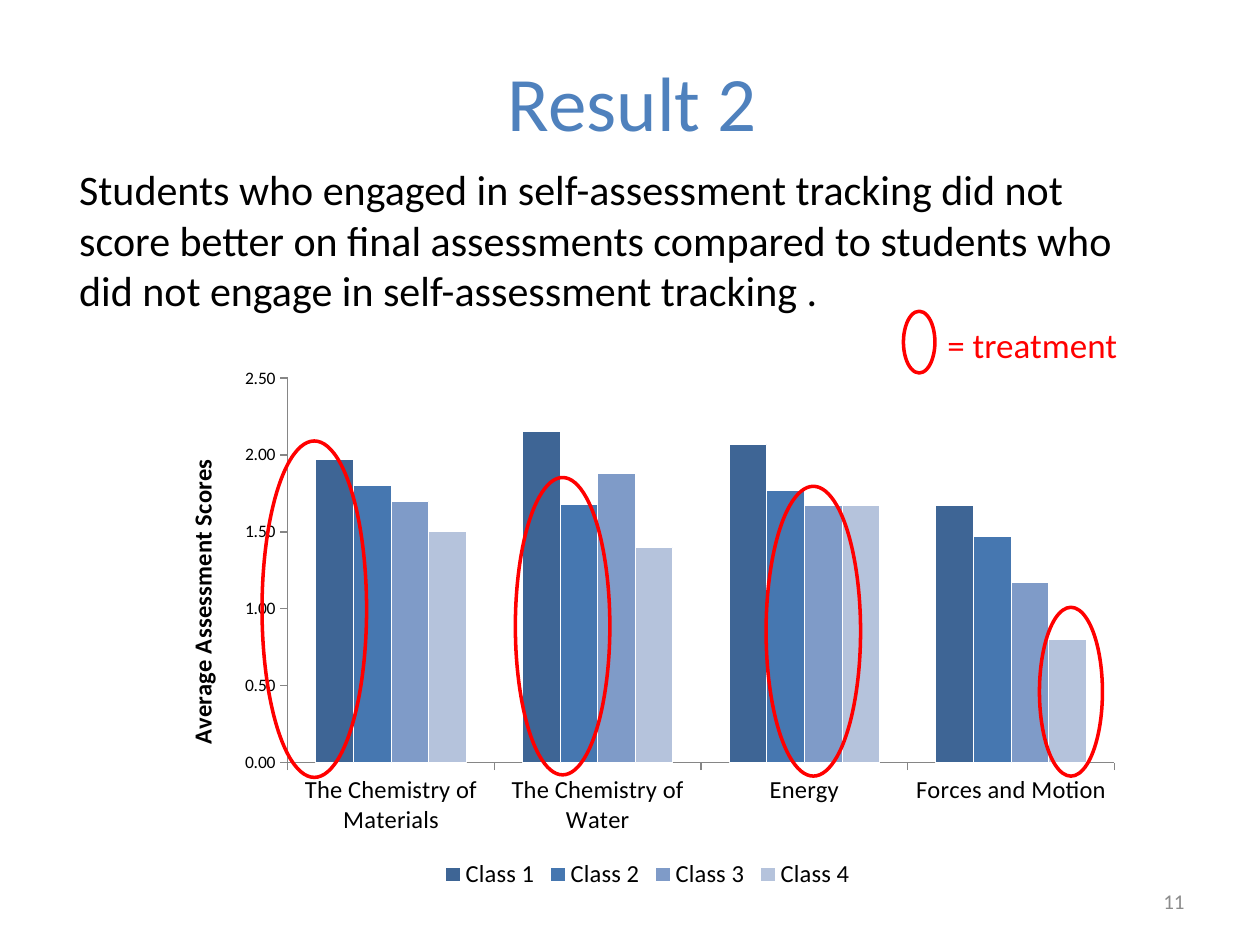
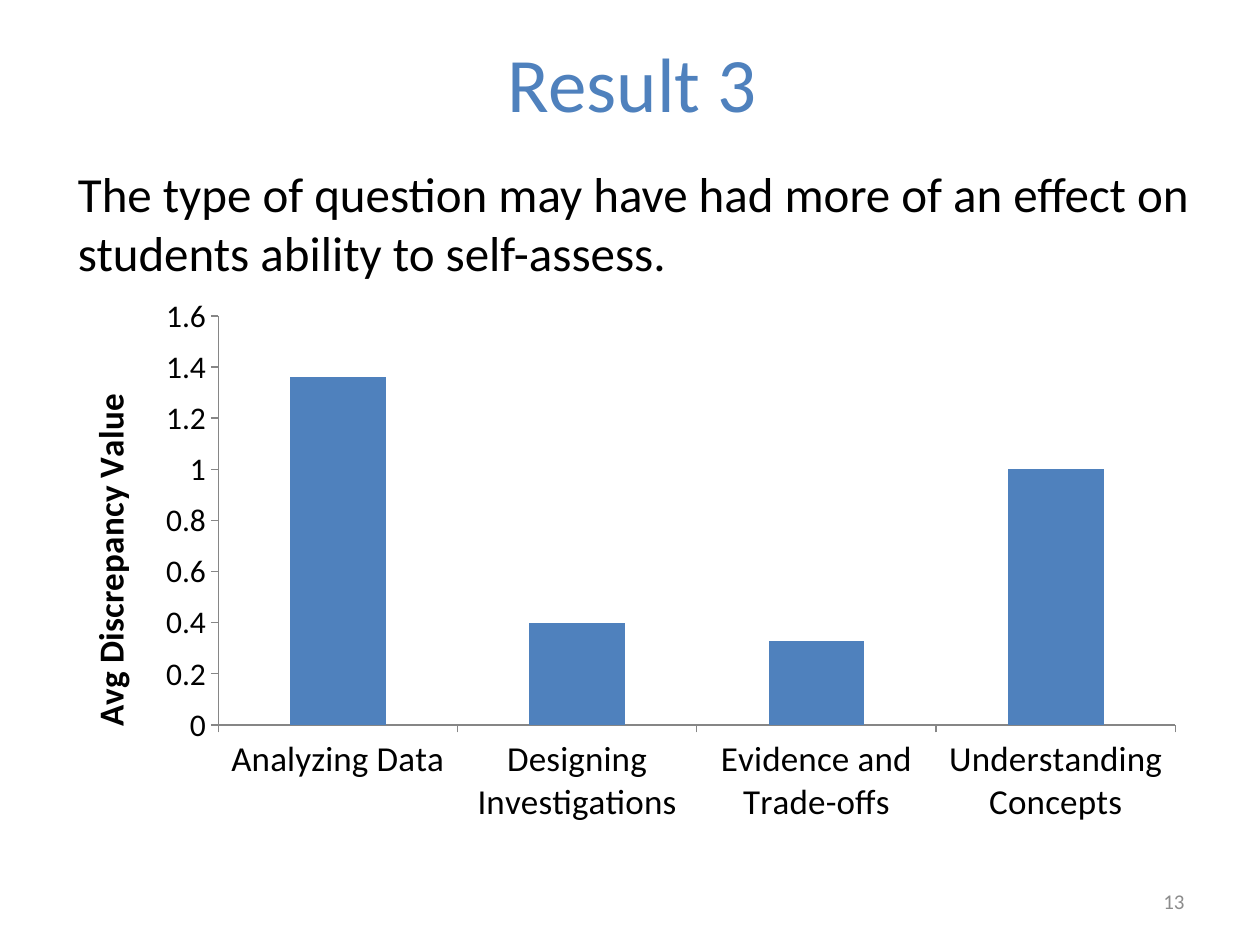
from lxml import etree
from pptx import Presentation
from pptx import util as u
from pptx.chart.data import CategoryChartData
from pptx.dml.color import RGBColor
from pptx.enum import chart as ch, shapes, text
from pptx.oxml.ns import qn

BLUE = RGBColor(0x4F, 0x81, 0xBD)
BLACK = RGBColor(0, 0, 0)
RED = RGBColor(0xFF, 0, 0)
GREY = RGBColor(0x8C, 0x8C, 0x8C)
AXIS = RGBColor(0x86, 0x86, 0x86)
CLASS_BLUES = [RGBColor(0x3E, 0x65, 0x95), RGBColor(0x46, 0x77, 0xB0),
               RGBColor(0x7F, 0x9B, 0xC8), RGBColor(0xB5, 0xC3, 0xDC)]
FONT = "Calibri"
LEFT, CENTER, RIGHT = text.PP_ALIGN.LEFT, text.PP_ALIGN.CENTER, text.PP_ALIGN.RIGHT
TOP, MIDDLE = text.MSO_ANCHOR.TOP, text.MSO_ANCHOR.MIDDLE


def add_text(s, box, words, size, color, align=LEFT, anchor=TOP):
    tf = s.shapes.add_textbox(*[u.Inches(v) for v in box]).text_frame
    tf.word_wrap = True
    tf.vertical_anchor = anchor
    tf.text = words
    p = tf.paragraphs[0]
    p.alignment = align
    r = p.runs[0]
    r.font.name, r.font.size, r.font.color.rgb = FONT, u.Pt(size), color


def add_columns(s, box, cats, series, colors, axis_title, title_size,
                cat_size, val_size, val_format, top, step, plot_box):
    data = CategoryChartData()
    data.categories = cats
    for name, vals in series:
        data.add_series(name, vals)
    chart = s.shapes.add_chart(ch.XL_CHART_TYPE.COLUMN_CLUSTERED,
                               *[u.Inches(v) for v in box], data).chart
    chart.has_title = False
    chart.has_legend = False
    chart.font.name, chart.font.size, chart.font.color.rgb = FONT, u.Pt(10), BLACK

    plot = chart.plots[0]
    plot.gap_width, plot.overlap, plot.vary_by_categories = 150, 0, False
    for ser, color in zip(plot.series, colors):
        ser.format.fill.solid()
        ser.format.fill.fore_color.rgb = color

    for axis, size in ((chart.category_axis, cat_size), (chart.value_axis, val_size)):
        axis.has_major_gridlines = False
        axis.major_tick_mark = ch.XL_TICK_MARK.OUTSIDE
        axis.minor_tick_mark = ch.XL_TICK_MARK.NONE
        axis.format.line.color.rgb = AXIS
        axis.format.line.width = u.Pt(0.75)
        font = axis.tick_labels.font
        font.name, font.size, font.color.rgb = FONT, u.Pt(size), BLACK

    axis = chart.value_axis
    axis.minimum_scale, axis.maximum_scale, axis.major_unit = 0, top, step
    axis.tick_labels.number_format = val_format
    axis.tick_labels.number_format_is_linked = False
    tf = axis.axis_title.text_frame
    tf.text = axis_title
    font = tf.paragraphs[0].runs[0].font
    font.name, font.size, font.bold, font.color.rgb = FONT, u.Pt(title_size), True, BLACK

    area = chart._chartSpace.find(".//" + qn("c:plotArea"))
    for old in area.findall(qn("c:layout")):
        area.remove(old)
    layout = etree.Element(qn("c:layout"))
    area.insert(0, layout)
    manual = etree.SubElement(layout, qn("c:manualLayout"))
    settings = [("layoutTarget", "inner"), ("xMode", "edge"), ("yMode", "edge")]
    for tag, val in settings + list(zip("xywh", plot_box)):
        etree.SubElement(manual, qn("c:" + tag)).set("val", str(val))
    return chart


prs = Presentation()
prs.slide_width, prs.slide_height = u.Inches(10), u.Inches(7.5)

slides = []
for title, title_top, number in (("Result 2", 0.17, "11"), ("Result 3", 0.02, "13")):
    s = prs.slides.add_slide(prs.slide_layouts[6])
    add_text(s, (0.52, title_top, 9, 1.25), title, 44, BLUE, CENTER, MIDDLE)
    add_text(s, (7.17, 6.95, 2.33, 0.4), number, 12, GREY, RIGHT, MIDDLE)
    slides.append(s)

s = slides[0]
add_text(s, (0.53, 1.25, 8.75, 1.31),
         "Students who engaged in self-assessment tracking did not score better on "
         "final assessments compared to students who did not engage in "
         "self-assessment tracking .", 24, BLACK)
chart = add_columns(
    s, (1.28, 2.83, 7.72, 4.27),
    ["The Chemistry of Materials", "The Chemistry of Water", "Energy", "Forces and Motion"],
    [("Class 1", (1.97, 2.15, 2.07, 1.67)),
     ("Class 2", (1.8, 1.68, 1.77, 1.47)),
     ("Class 3", (1.7, 1.88, 1.67, 1.17)),
     ("Class 4", (1.5, 1.4, 1.67, 0.8))],
    CLASS_BLUES, "Average Assessment Scores", 14, 14, 10, "0.00", 2.5, 0.5,
    (0.13, 0.04, 0.85, 0.715))
for ser in chart.plots[0].series:
    ser.format.line.color.rgb = RGBColor(0xFF, 0xFF, 0xFF)
    ser.format.line.width = u.Pt(0.5)
chart.has_legend = True
chart.legend.position = ch.XL_LEGEND_POSITION.BOTTOM
chart.legend.include_in_layout = False
font = chart.legend.font
font.name, font.size, font.color.rgb = FONT, u.Pt(14), BLACK

treatment_rings = [(2.08, 3.5, 0.83, 2.67), (4.09, 3.79, 0.75, 2.36),
                   (6.08, 3.86, 0.75, 2.3), (8.25, 4.82, 0.5, 1.34)]
key_ring = (7.17, 2.47, 0.25, 0.49)
for box in treatment_rings + [key_ring]:
    sp = s.shapes.add_shape(shapes.MSO_SHAPE.OVAL, *[u.Inches(v) for v in box])
    sp.shadow.inherit = False
    sp.fill.background()
    sp.line.color.rgb = RED
    sp.line.width = u.Pt(2)
add_text(s, (7.42, 2.52, 1.75, 0.44), "= treatment", 20, RED)

s = slides[1]
add_columns(
    s, (0.5, 2.25, 9, 4.95),
    ["Analyzing Data", "Designing Investigations", "Evidence and Trade-offs",
     "Understanding Concepts"],
    [("Series 1", (1.36, 0.4, 0.33, 1))],
    [BLUE], "Avg Discrepancy Value", 20, 20, 18, "General", 1.6, 0.2,
    (0.137, 0.052, 0.844, 0.656))
add_text(s, (0.52, 1.25, 9.08, 1.04),
         "The type of question may have had more of an effect on students ability "
         "to self-assess.", 28, BLACK)

prs.save("out.pptx")
